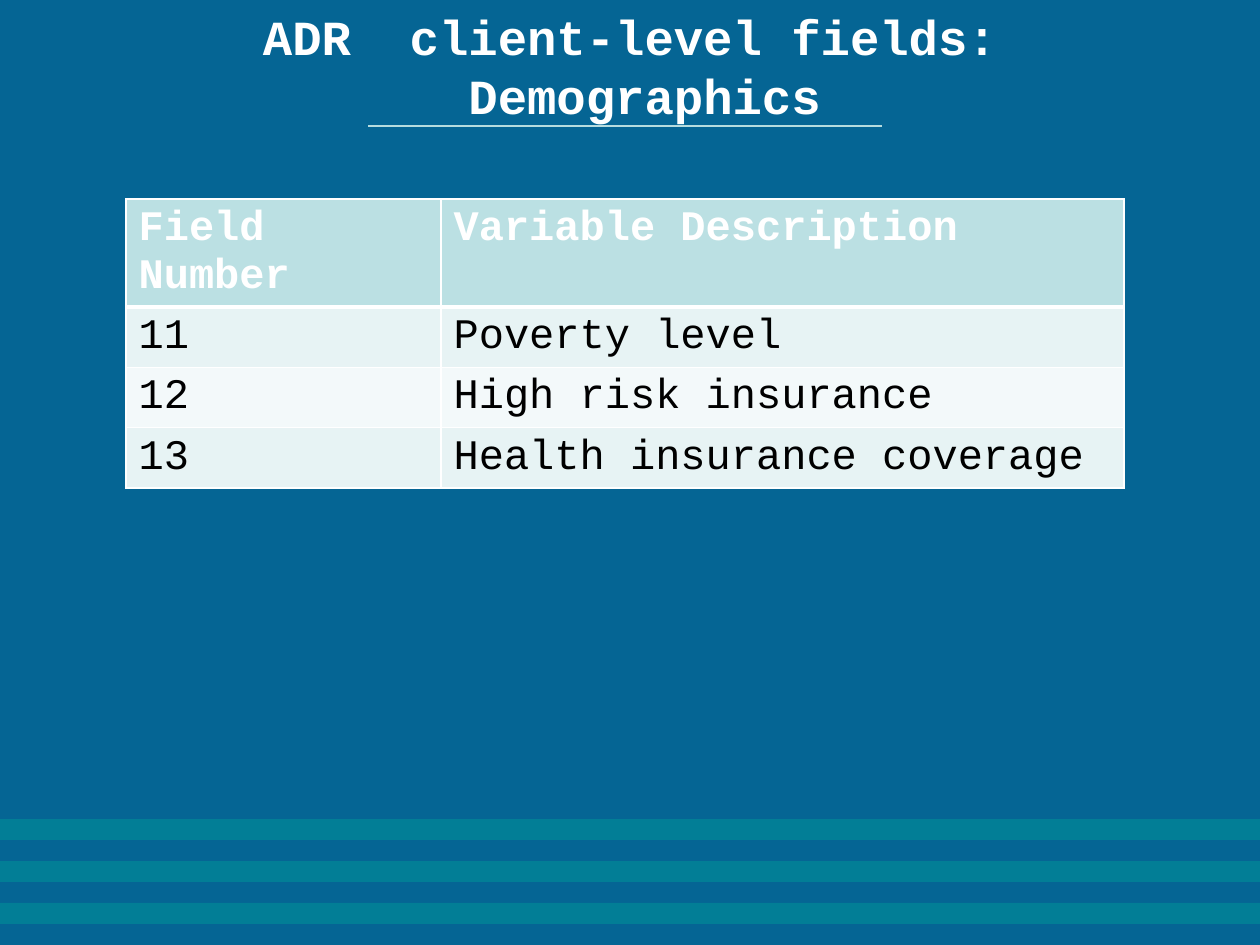
from lxml.etree import SubElement
from pptx import Presentation
from pptx.dml.color import RGBColor
from pptx.enum.shapes import MSO_CONNECTOR, MSO_SHAPE
from pptx.enum.text import MSO_ANCHOR, MSO_AUTO_SIZE, PP_ALIGN
from pptx.oxml.ns import qn
from pptx.util import Inches, Pt

BLUE = RGBColor(0x05, 0x65, 0x94)
TEAL = RGBColor(0x00, 0x99, 0x99)
RULE = RGBColor(0xB6, 0xDC, 0xDF)
HEADER = RGBColor(0xBB, 0xE0, 0xE3)
BANDS = [RGBColor(0xE7, 0xF3, 0xF4), RGBColor(0xF3, 0xF9, 0xFA)]
WHITE = RGBColor(0xFF, 0xFF, 0xFF)
BLACK = RGBColor(0, 0, 0)

FONT = "Courier New"
STRIPE = 1 / 6  # stripe height and the gap between stripes
STRIPE_TOP = 6.5
COLUMNS = [2.5, 5.42]
ROW_HEIGHTS = [0.57, 0.41, 0.41, 0.41]
FIELDS = [
    ("Field Number", "Variable Description"),
    ("11", "Poverty level"),
    ("12", "High risk insurance"),
    ("13", "Health insurance coverage"),
]


def format_font(font, size, color, bold):
    values = {"name": FONT, "size": Pt(size), "bold": bold}
    for name, value in values.items():
        setattr(font, name, value)
    font.color.rgb = color


def add_stripe(page, top, width):
    stripe = page.shapes.add_shape(
        MSO_SHAPE.RECTANGLE, 0, Inches(top), width, Inches(STRIPE))
    stripe.shadow.inherit = False
    stripe.fill.solid()
    stripe.fill.fore_color.rgb = TEAL
    stripe.line.fill.background()
    color = stripe.fill._xPr.find(".//" + qn("a:srgbClr"))
    SubElement(color, qn("a:alpha"), val="49000")


def set_title(page, text):
    title = page.shapes.title
    box = {"left": 0.5, "top": 0.17, "width": 9, "height": 0.7}
    for name, value in box.items():
        setattr(title, name, Inches(value))
    frame = title.text_frame
    frame.text = text
    frame.word_wrap = True
    frame.auto_size = MSO_AUTO_SIZE.NONE
    frame.vertical_anchor = MSO_ANCHOR.MIDDLE
    para = frame.paragraphs[0]
    para.alignment = PP_ALIGN.CENTER
    for span in para.runs:
        format_font(span.font, 28, WHITE, True)


def add_rule(page, start, end, top):
    rule = page.shapes.add_connector(
        MSO_CONNECTOR.STRAIGHT, Inches(start), Inches(top), Inches(end), Inches(top))
    rule.line.color.rgb = RULE
    rule.line.width = Pt(0.75)
    SubElement(rule._element.spPr, qn("a:effectLst"))


def set_borders(cell, widths):
    """Draw white cell borders; they must precede the fill in the XML."""
    props = cell._tc.get_or_add_tcPr()
    for index, (side, width) in enumerate(widths.items()):
        line = SubElement(props, qn("a:ln" + side), w=str(Pt(width)))
        fill = SubElement(line, qn("a:solidFill"))
        SubElement(fill, qn("a:srgbClr"), val=str(WHITE))
        props.insert(index, line)


def add_field_table(page):
    table = page.shapes.add_table(
        len(FIELDS), len(COLUMNS), Inches(1), Inches(1.58),
        Inches(sum(COLUMNS)), Inches(sum(ROW_HEIGHTS))).table
    for column, width in zip(table.columns, COLUMNS):
        column.width = Inches(width)
    for r, (height, texts) in enumerate(zip(ROW_HEIGHTS, FIELDS)):
        table.rows[r].height = Inches(height)
        is_header = r == 0
        for c, text in enumerate(texts):
            cell = table.cell(r, c)
            cell.text = text
            cell.fill.solid()
            cell.fill.fore_color.rgb = HEADER if is_header else BANDS[(r - 1) % 2]
            format_font(cell.text_frame.paragraphs[0].runs[0].font, 24,
                        WHITE if is_header else BLACK, is_header)
            set_borders(cell, {"L": 1, "R": 1, "T": 3 if r == 1 else 1,
                               "B": 3 if is_header else 1})


def main():
    deck = Presentation()
    deck.slide_width, deck.slide_height = Inches(10), Inches(7.5)
    page = deck.slides.add_slide(deck.slide_layouts[5])

    # Background and footer stripes
    page.background.fill.solid()
    page.background.fill.fore_color.rgb = BLUE
    for n in range(3):
        add_stripe(page, STRIPE_TOP + 2 * n * STRIPE, deck.slide_width)

    # Title with the rule under it
    set_title(page, "ADR  client-level fields:\v Demographics")
    add_rule(page, 7, 2.92, 1)

    # Field list
    add_field_table(page)
    deck.save("out.pptx")


if __name__ == "__main__":
    main()
